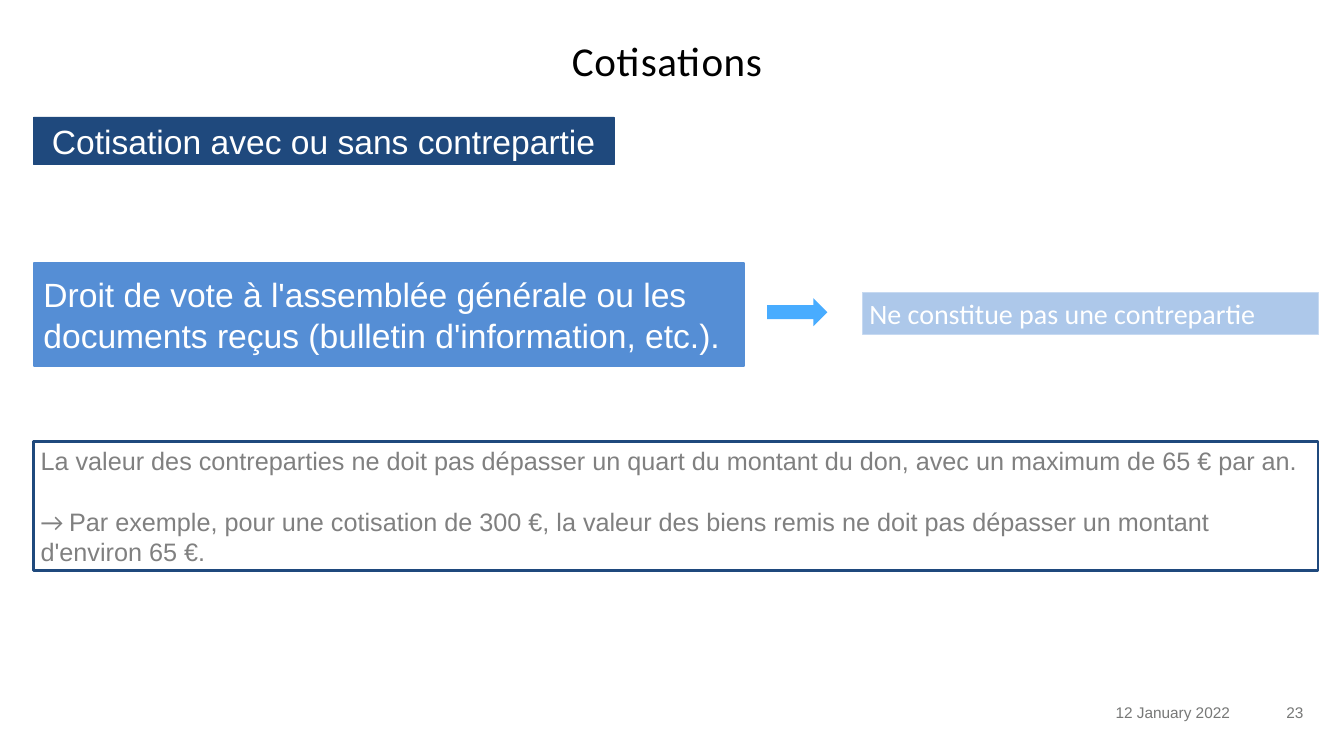
from dataclasses import dataclass

from lxml import etree
from pptx import Presentation
from pptx.dml.color import RGBColor
from pptx.enum.shapes import MSO_SHAPE
from pptx.enum.text import MSO_ANCHOR, MSO_AUTO_SIZE, PP_ALIGN
from pptx.oxml.ns import qn
from pptx.util import Emu, Pt

EMU_PER_PX = 9525
TITLE_ONLY = 5
RECTANGLE, RIGHT_ARROW = MSO_SHAPE.RECTANGLE, MSO_SHAPE.RIGHT_ARROW
LEFT, CENTER, RIGHT, JUSTIFY = (
    PP_ALIGN.LEFT, PP_ALIGN.CENTER, PP_ALIGN.RIGHT, PP_ALIGN.JUSTIFY)
TOP, MIDDLE = MSO_ANCHOR.TOP, MSO_ANCHOR.MIDDLE
NO_AUTOFIT = MSO_AUTO_SIZE.NONE


@dataclass(frozen=True)
class Theme:
    sans: str = "Arial"
    heading: str = "Calibri"
    black: str = "000000"
    white: str = "FFFFFF"
    navy: str = "1F497D"
    blue: str = "558ED5"
    light_blue: str = "8EB4E3"
    pale_blue: str = "C6D9F1"
    arrow_blue: str = "48ACFF"
    gray: str = "808080"
    footer_gray: str = "777877"
    title_size: float = 44
    box_size: float = 36
    result_size: float = 30
    rule_size: float = 27
    footer_size: float = 16.5


THEME = Theme()


def px(value):
    return Emu(value * EMU_PER_PX)


def color(value):
    return RGBColor.from_string(value)


def style_paragraph(paragraph, size, text_color, font=THEME.sans, align=LEFT):
    paragraph.alignment = align
    paragraph.font.name = font
    paragraph.font.size = Pt(size)
    paragraph.font.color.rgb = color(text_color)


def set_frame(frame, anchor, insets):
    frame.word_wrap = True
    frame.auto_size = NO_AUTOFIT
    frame.vertical_anchor = anchor
    (frame.margin_left, frame.margin_top,
     frame.margin_right, frame.margin_bottom) = map(px, insets)


def add_title(slide, text, box):
    title = slide.shapes.title
    title.left, title.top, title.width, title.height = map(px, box)
    set_frame(title.text_frame, TOP, (0, 0, 14, 7))
    paragraph = title.text_frame.paragraphs[0]
    run = paragraph.add_run()
    run.text = text
    run.font._element.set("spc", "60")
    style_paragraph(paragraph, THEME.title_size, THEME.black, THEME.heading, CENTER)


def add_shape(slide, kind, box, fill=None, line=None, line_width=0.75, alpha=None):
    shape = slide.shapes.add_shape(kind, *map(px, box))
    shape.shadow.inherit = False
    if fill:
        shape.fill.solid()
        shape.fill.fore_color.rgb = color(fill)
    else:
        shape.fill.background()
    if alpha:
        source = shape._element.spPr.find(qn("a:solidFill")).find(qn("a:srgbClr"))
        etree.SubElement(source, qn("a:alpha"), val=str(alpha * 1000))
    if line:
        shape.line.color.rgb = color(line)
        shape.line.width = Pt(line_width)
    else:
        shape.line.fill.background()
    return shape


def write_text(shape, text, size, text_color, font=THEME.sans, align=LEFT,
               anchor=MIDDLE, insets=(10, 5, 10, 5)):
    set_frame(shape.text_frame, anchor, insets)
    paragraph = shape.text_frame.paragraphs[0]
    paragraph.text = text
    style_paragraph(paragraph, size, text_color, font, align)


def add_footer_text(slide, text, box):
    label = slide.shapes.add_textbox(*map(px, box))
    write_text(label, text, THEME.footer_size, THEME.footer_gray,
               align=RIGHT, anchor=TOP)


def add_rule(slide, box, rule, example):
    shape = add_shape(slide, RECTANGLE, box, line=THEME.navy, line_width=2.75)
    write_text(shape, rule, THEME.rule_size, THEME.gray)
    paragraph = shape.text_frame.add_paragraph()
    paragraph.space_before = Pt(32)
    style_paragraph(paragraph, THEME.rule_size, THEME.gray)
    for text, font in (("→ ", THEME.heading), (example, THEME.sans)):
        run = paragraph.add_run()
        run.text = text
        run.font.name = font


def main():
    presentation = Presentation()
    presentation.slide_width, presentation.slide_height = px(1920), px(1080)
    slide = presentation.slides.add_slide(presentation.slide_layouts[TITLE_ONLY])

    # Footer
    add_footer_text(slide, "12 January 2022", (1305, 1000, 462, 76))
    add_footer_text(slide, "23", (1767, 1000, 105, 76))

    # Title and subject
    add_title(slide, "Cotisations", (48, 50, 1824, 57))
    subject = add_shape(slide, RECTANGLE, (48, 167, 829, 68), THEME.navy, THEME.navy)
    write_text(subject, "Cotisation avec ou sans contrepartie",
               THEME.box_size, THEME.white, align=CENTER)

    # Case, arrow and consequence
    result = add_shape(slide, RECTANGLE, (1232, 418, 651, 59),
                       THEME.light_blue, THEME.pale_blue, alpha=72)
    write_text(result, "Ne constitue pas une contrepartie",
               THEME.result_size, THEME.white, THEME.heading, JUSTIFY)
    add_shape(slide, RIGHT_ARROW, (1096, 426, 86, 40), THEME.arrow_blue)
    case = add_shape(slide, RECTANGLE, (48, 376, 1015, 147),
                     THEME.blue, THEME.blue, line_width=2)
    write_text(case, "Droit de vote à l'assemblée générale ou les documents reçus "
               "(bulletin d'information, etc.).",
               THEME.box_size, THEME.white, insets=(14, 7, 14, 7))

    # Limit on the value, with an example
    add_rule(slide, (48, 631, 1835, 184),
             "La valeur des contreparties ne doit pas dépasser un quart du montant "
             "du don, avec un maximum de 65 € par an.",
             "Par exemple, pour une cotisation de 300 €, la valeur des biens remis "
             "ne doit pas dépasser un montant d'environ 65 €.")

    presentation.save("out.pptx")


if __name__ == "__main__":
    main()
